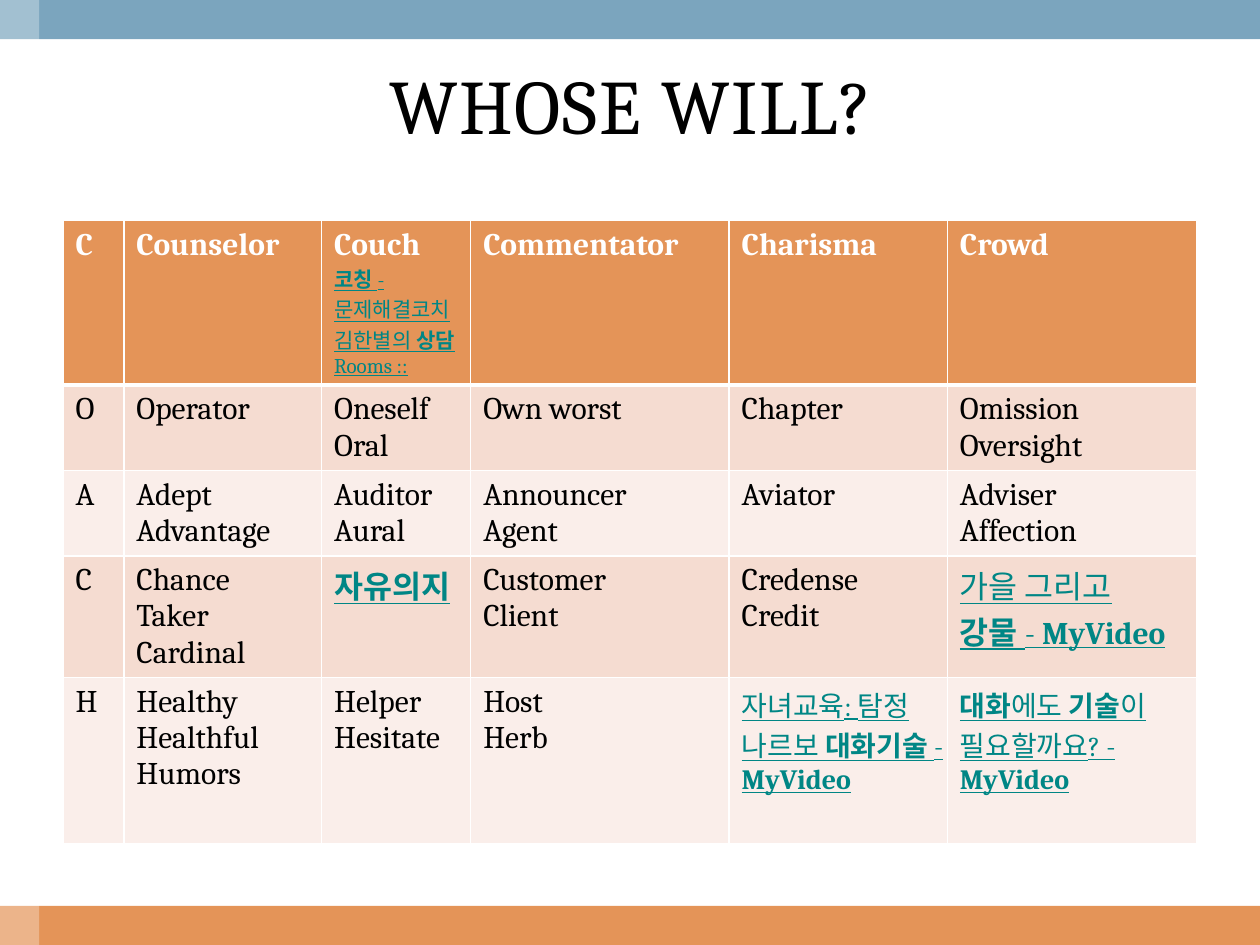
from lxml import etree
from pptx import Presentation
from pptx.dml.color import RGBColor as RGB
from pptx.enum.shapes import MSO_SHAPE as Shape
from pptx.enum.text import MSO_ANCHOR as Anchor, PP_ALIGN as Align
from pptx.oxml.ns import qn
from pptx.util import Pt

FONT = "Cambria"
WHITE = RGB(0xFF, 0xFF, 0xFF)
BLACK = RGB(0, 0, 0)
BLUE = RGB(0x7B, 0xA5, 0xBE)
ORANGE = RGB(0xE4, 0x94, 0x58)
TEAL = RGB(0x00, 0x86, 0x85)
BANDS = [RGB(0xF5, 0xDC, 0xD1), RGB(0xFA, 0xEE, 0xEA)]

# Content: a cell is plain text, one line per paragraph
TITLE = "WHOSE WILL?"
ROWS = [
    ["C", "Counselor", "Couch", "Commentator", "Charisma", "Crowd"],
    ["O", "Operator", "Oneself\nOral", "Own worst", "Chapter",
     "Omission\nOversight"],
    ["A", "Adept\nAdvantage", "Auditor\nAural", "Announcer\nAgent",
     "Aviator", "Adviser\nAffection"],
    ["C", "Chance\nTaker\nCardinal", "", "Customer\nClient",
     "Credense\nCredit", ""],
    ["H", "Healthy\nHealthful\nHumors", "Helper\nHesitate", "Host\nHerb",
     "", ""],
]
# Teal underlined phrases: (row, column) -> size, [(text, bold)]
PHRASES = {
    (0, 2): (12, [("코칭", True), (" - 문제해결코치 김한별의 ", False),
                  ("상담", True), ("Rooms ::", False)]),
    (3, 2): (18, [("자유의지", True)]),
    (3, 5): (18, [("가을 그리고 ", False), ("강물", True), (" - ", False),
                  ("MyVideo", True)]),
    (4, 4): (16, [("자녀교육: 탐정 나르보 ", False), ("대화기술", True),
                  (" - ", False), ("MyVideo", True)]),
    (4, 5): (16, [("대화", True), ("에도 ", False), ("기술", True),
                  ("이 필요할까요? - ", False), ("MyVideo", True)]),
}
WIDTHS = [34.8, 113, 85.2, 147.7, 124.7, 142.6]
HEIGHTS = [93.6, 48.5, 48.5, 69.5, 71]
WIDE, HIGH, BAR = 720, 540, 22.4

deck = Presentation()
deck.slide_width, deck.slide_height = Pt(WIDE), Pt(HIGH)
slide = deck.slides.add_slide(deck.slide_layouts[6])


def add_bar(left, top, width, height, color):
    bar = slide.shapes.add_shape(Shape.RECTANGLE, Pt(left), Pt(top),
                                 Pt(width), Pt(height))
    bar.shadow.inherit = False
    bar.fill.solid()
    bar.fill.fore_color.rgb = color
    bar.line.fill.background()
    return bar


def add_run(para, text, size, color, bold=False, under=False):
    run = para.add_run()
    run.text = text
    font = run.font
    font.name, font.size, font.bold = FONT, Pt(size), bold
    font.color.rgb = color
    if under:
        font.underline = True
    return run


def next_para(frame):
    para = frame.paragraphs[-1]
    return frame.add_paragraph() if para.runs else para


def add_rule(cell, width):
    """Draw a white line under a cell."""
    rule = etree.Element(qn("a:lnB"), w=str(Pt(width)))
    fill = etree.SubElement(rule, qn("a:solidFill"))
    etree.SubElement(fill, qn("a:srgbClr"), val=str(WHITE))
    cell._tc.get_or_add_tcPr().insert(0, rule)


# Edge bars, with a pale strip down the left side
add_bar(0, HIGH - BAR, WIDE, BAR, ORANGE)
add_bar(0, 0, WIDE, BAR, BLUE)
strip = add_bar(0, 0, BAR, HIGH, WHITE)
tint = strip.fill._xPr.find(qn("a:solidFill"))[0]
etree.SubElement(tint, qn("a:alpha"), val="30000")

# Table
table = slide.shapes.add_table(len(ROWS), len(WIDTHS), Pt(36), Pt(126),
                               Pt(sum(WIDTHS)), Pt(sum(HEIGHTS))).table
for col, width in zip(table.columns, WIDTHS):
    col.width = Pt(width)
for row, height in zip(table.rows, HEIGHTS):
    row.height = Pt(height)

for r, words in enumerate(ROWS):
    head = r == 0
    for c, text in enumerate(words):
        cell = table.cell(r, c)
        cell.fill.solid()
        cell.fill.fore_color.rgb = ORANGE if head else BANDS[(r - 1) % 2]
        if head:
            add_rule(cell, 3)
        frame = cell.text_frame
        for line in text.splitlines():
            add_run(next_para(frame), line, 18, WHITE if head else BLACK, head)
        if (r, c) in PHRASES:
            cell.margin_right = Pt(2)
            size, parts = PHRASES[r, c]
            para = next_para(frame)
            for part, bold in parts:
                add_run(para, part, size, TEAL, bold, True)

# Title
box = slide.shapes.add_textbox(Pt(23.8), Pt(22.3), Pt(674), Pt(74.2))
frame = box.text_frame
frame.word_wrap = True
frame.vertical_anchor = Anchor.MIDDLE
para = frame.paragraphs[0]
para.alignment = Align.CENTER
run = add_run(para, TITLE, 44, BLACK)
run.font._element.set("spc", "100")

deck.save("out.pptx")
